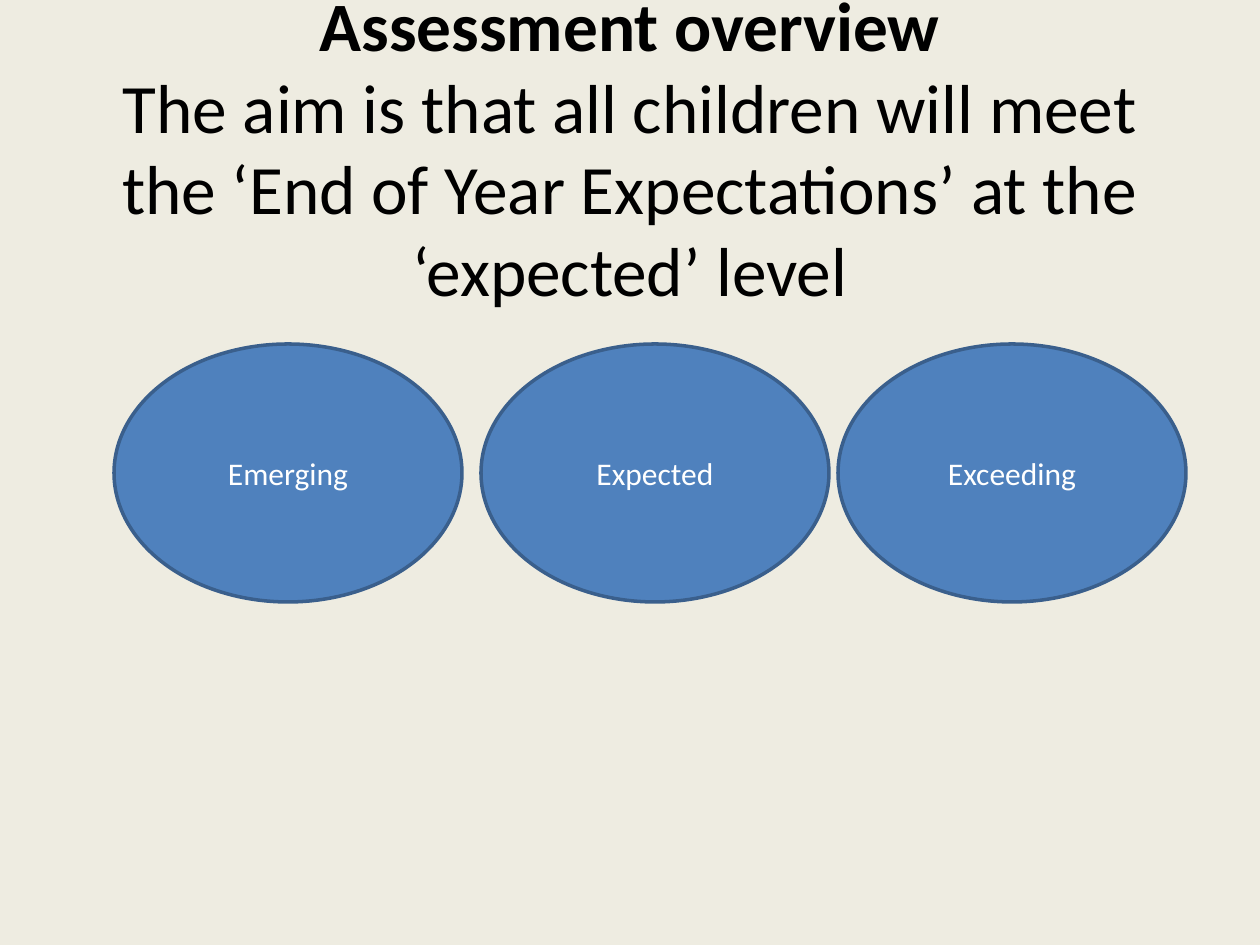
from dataclasses import dataclass

from pptx import Presentation
from pptx.dml.color import RGBColor as Color
from pptx.enum.shapes import MSO_SHAPE as Preset
from pptx.enum.text import MSO_ANCHOR as Anchor, PP_ALIGN as Align
from pptx.slide import Slide
from pptx.util import Pt

PX = 914400 // 126


@dataclass(frozen=True)
class Theme:
    font: str = "Calibri"
    background: Color = Color.from_string("EEECE1")
    ink: Color = Color.from_string("000000")
    fill: Color = Color.from_string("4F81BD")
    outline: Color = Color.from_string("3A5F8C")
    label: Color = Color.from_string("FFFFFF")
    title_size: float = 39.6
    label_size: float = 18


@dataclass(frozen=True)
class Level:
    name: str
    left: int


THEME = Theme()
LEVEL_TOP, LEVEL_WIDTH, LEVEL_HEIGHT = 344, 348, 258
TITLE_LINE = 83
LEVELS = (Level("Emerging", 114), Level("Expected", 481), Level("Exceeding", 838))
HEADING = "Assessment overview"
AIM = (
    "The aim is that all children will meet the ‘End of Year Expectations’ "
    "at the ‘expected’ level"
)


def style(para, size: float, color: Color) -> None:
    para.alignment = Align.CENTER
    para.font.name = THEME.font
    para.font.size = Pt(size)
    para.font.color.rgb = color


def draw_title(page: Slide) -> None:
    box = page.shapes.add_textbox(63 * PX, 38 * PX, 1134 * PX, 306 * PX)
    frame = box.text_frame
    frame.word_wrap = True
    frame.vertical_anchor = Anchor.MIDDLE
    frame.margin_bottom = frame.margin_top + TITLE_LINE * PX
    para = frame.paragraphs[0]
    style(para, THEME.title_size, THEME.ink)
    para.line_spacing = 0.98
    heading = para.add_run()
    heading.text = HEADING
    heading.font.bold = True
    para.add_line_break()
    para.add_run().text = AIM


def draw_level(page: Slide, level: Level) -> None:
    oval = page.shapes.add_shape(
        Preset.OVAL,
        level.left * PX,
        LEVEL_TOP * PX,
        LEVEL_WIDTH * PX,
        LEVEL_HEIGHT * PX,
    )
    oval.shadow.inherit = False
    oval.fill.solid()
    oval.fill.fore_color.rgb = THEME.fill
    oval.line.color.rgb = THEME.outline
    oval.line.width = Pt(2)
    frame = oval.text_frame
    frame.word_wrap = True
    frame.vertical_anchor = Anchor.MIDDLE
    para = frame.paragraphs[0]
    para.text = level.name
    style(para, THEME.label_size, THEME.label)


def main() -> None:
    deck = Presentation()
    deck.slide_width, deck.slide_height = 1260 * PX, 945 * PX
    page = deck.slides.add_slide(deck.slide_layouts[6])
    page.background.fill.solid()
    page.background.fill.fore_color.rgb = THEME.background
    draw_title(page)
    for level in LEVELS:
        draw_level(page, level)
    deck.save("out.pptx")


if __name__ == "__main__":
    main()
